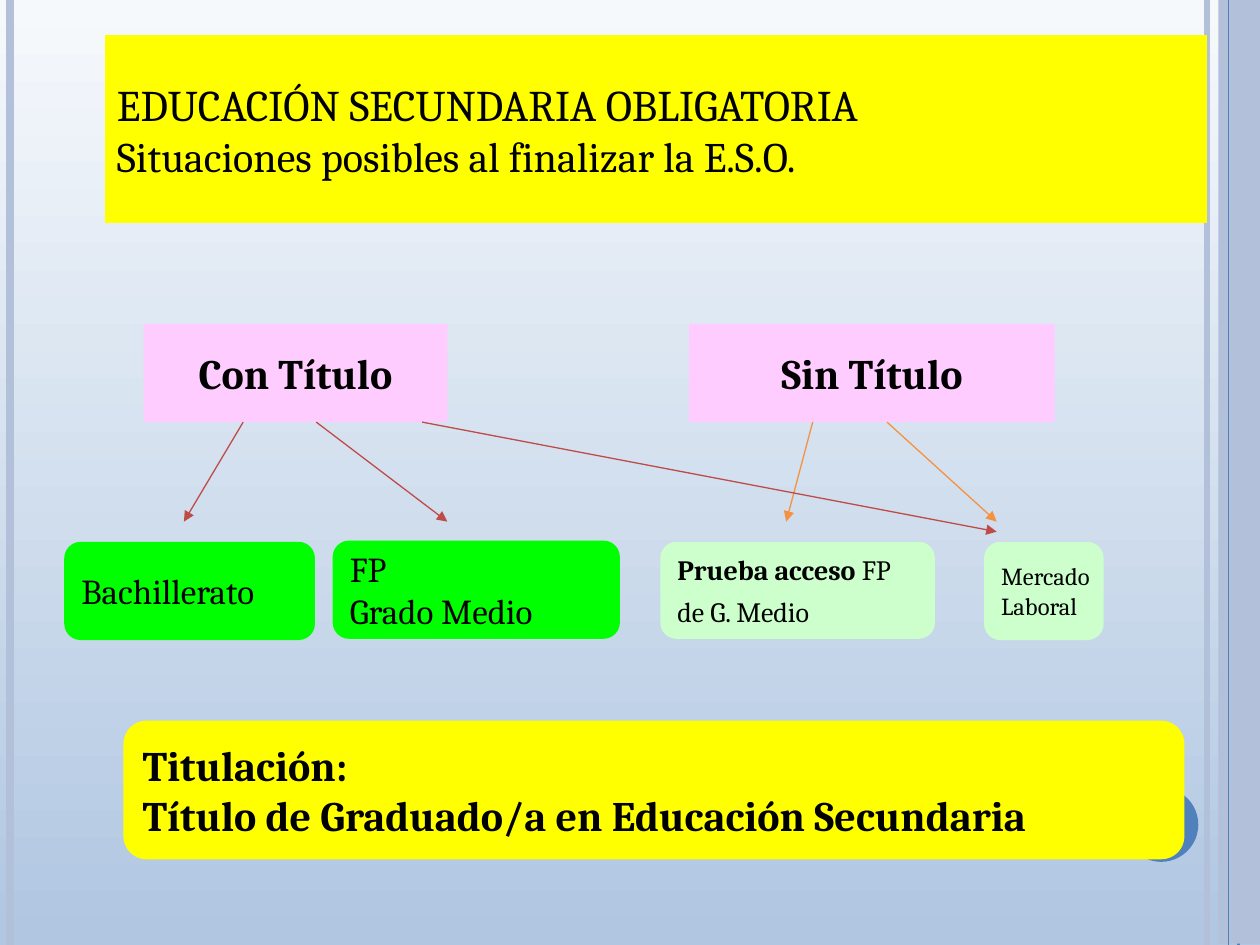
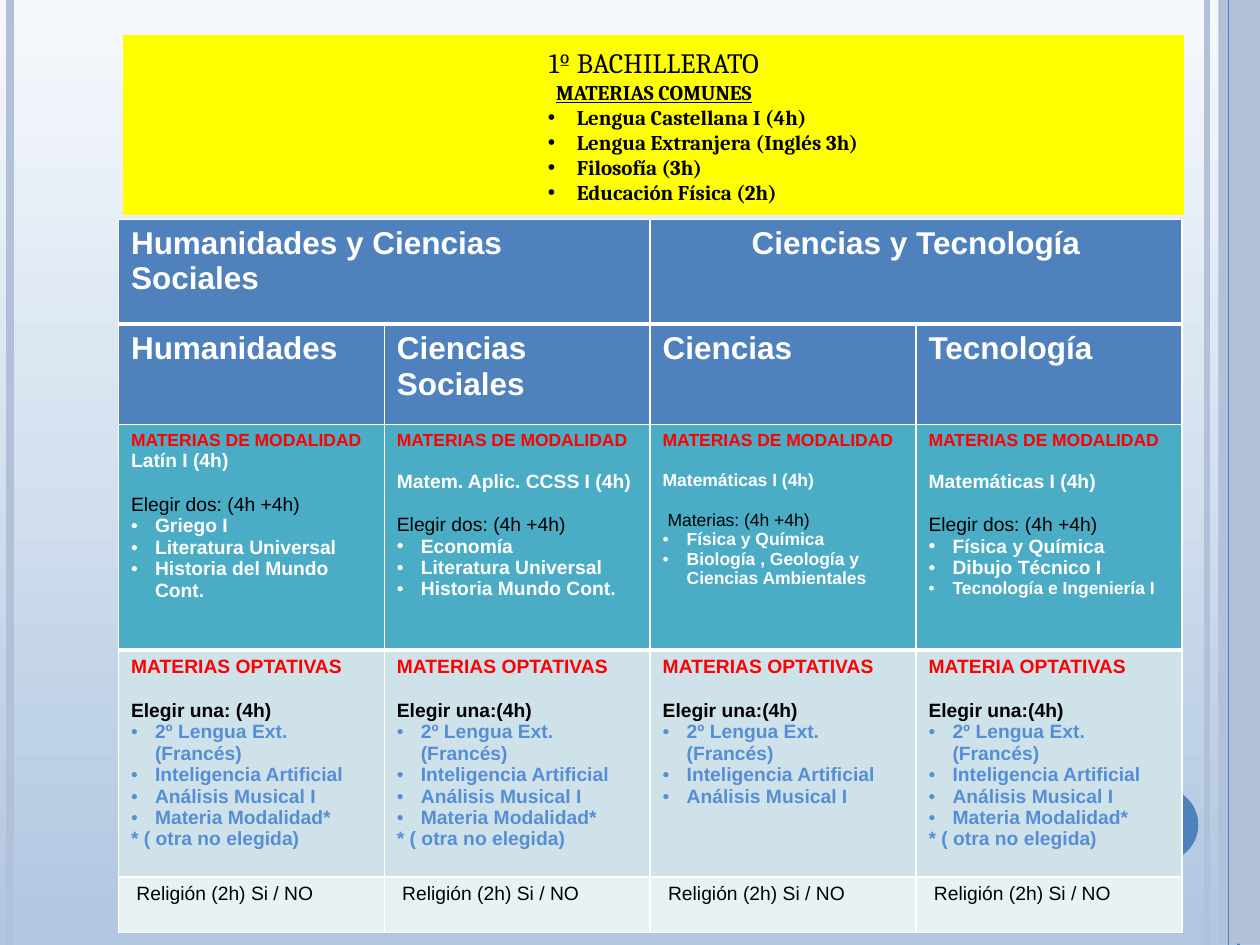
"""Build two slides on the paths after compulsory secondary education."""
from dataclasses import dataclass
from typing import NamedTuple

from lxml import etree
from pptx import Presentation
from pptx import util as u
from pptx.dml import color
from pptx.enum import shapes, text
from pptx.oxml import ns

BLUE, LAVENDER, TEAL, SKY = "4F81BD", "B2C0DA", "4BACC6", "558ED5"
YELLOW, PINK, GREEN, MINT = "FFFF00", "FFCCFF", "00FF00", "CCFFCC"
BLACK, WHITE, RED = "000000", "FFFFFF", "FF0000"
CRIMSON, ORANGE = "BE4B48", "F59240"
SHAPE = shapes.MSO_SHAPE
ROUNDED = SHAPE.FLOWCHART_ALTERNATE_PROCESS
PROCESS = SHAPE.FLOWCHART_PROCESS
CENTER = text.PP_ALIGN.CENTER
LEFT, COLUMNS, TABLE_WIDTH = 0.94, 4, 8.44


class Span(NamedTuple):
    """A run of text with its own weight."""
    words: str
    bold: bool


@dataclass
class Para:
    """A paragraph and its look."""
    content: str | tuple[Span, ...]
    size: float
    bold: bool = False
    ink: str = BLACK
    font: str = "Cambria"
    align: text.PP_ALIGN = text.PP_ALIGN.LEFT
    underline: bool = False
    before: float = 0
    indent: float = 0
    hanging: float = 0


class Box(NamedTuple):
    """A filled shape with text."""
    kind: SHAPE
    left: float
    top: float
    width: float
    height: float
    fill: str
    paras: tuple[Para, ...] = ()


class Line(NamedTuple):
    """A straight line."""
    x1: float
    y1: float
    x2: float
    y2: float
    ink: str
    weight: float = 0.75
    arrow: bool = False


class Row(NamedTuple):
    """A table row with the weights of its top and bottom borders."""
    height: float
    fill: str
    cells: list[list[Para]]
    top: float = 0.96
    bottom: float = 3


def rgb(value: str) -> color.RGBColor:
    """Turn a hex string into a colour."""
    return color.RGBColor.from_string(value)


def add_child(parent, tag: str, **attributes: str):
    """Append a DrawingML element."""
    return etree.SubElement(parent, ns.qn(f"a:{tag}"), **attributes)


def write(frame, paras) -> None:
    """Fill a text frame with paragraphs."""
    for index, para in enumerate(paras):
        paragraph = frame.add_paragraph() if index else frame.paragraphs[0]
        if para.indent:
            properties = paragraph._p.get_or_add_pPr()
            properties.set("marL", str(u.Inches(para.indent)))
            properties.set("indent", str(-u.Inches(para.hanging)))
            add_child(properties, "buFont", typeface="Arial")
            add_child(properties, "buChar", char="•")
        paragraph.alignment = para.align
        paragraph.space_before = u.Pt(para.before)
        font = paragraph.font
        font.name, font.size, font.bold = para.font, u.Pt(para.size), para.bold
        font.underline = para.underline
        font.color.rgb = rgb(para.ink)
        if isinstance(para.content, str):
            paragraph.add_run().text = para.content
        else:
            for span in para.content:
                run = paragraph.add_run()
                run.text, run.font.bold = span.words, span.bold


def draw_box(page, box: Box) -> None:
    """Draw a filled shape and its text."""
    shape = page.shapes.add_shape(box.kind, *map(u.Inches, box[1:5]))
    shape.shadow.inherit = False
    shape.fill.solid()
    shape.fill.fore_color.rgb = rgb(box.fill)
    shape.line.fill.background()
    if box.paras:
        shape.text_frame.word_wrap = False
        shape.text_frame.vertical_anchor = text.MSO_ANCHOR.MIDDLE
        write(shape.text_frame, box.paras)


def draw_line(page, line: Line) -> None:
    """Draw a line, with an arrowhead if asked."""
    connector = page.shapes.add_connector(
        shapes.MSO_CONNECTOR.STRAIGHT, *map(u.Inches, line[:4]))
    connector.line.color.rgb = rgb(line.ink)
    connector.line.width = u.Pt(line.weight)
    if line.arrow:
        add_child(connector.line._get_or_add_ln(), "tailEnd", type="triangle")
    add_child(connector._element.spPr, "effectLst")


def draw_table(page, top: float, rows: list[Row]) -> None:
    """Draw a table of equal columns across the common width."""
    count = len(rows[0].cells)
    height = sum(row.height for row in rows)
    table = page.shapes.add_table(
        len(rows), count, *map(u.Inches, (LEFT, top, TABLE_WIDTH, height))).table
    table.first_row = table.horz_banding = False
    for column in table.columns:
        column.width = u.Inches(TABLE_WIDTH / count)
    for index, row in enumerate(rows):
        table.rows[index].height = u.Inches(row.height)
        for cell, paras in zip(table.rows[index].cells, row.cells):
            cell.fill.solid()
            cell.fill.fore_color.rgb = rgb(row.fill)
            write(cell.text_frame, paras)
            properties = cell._tc.get_or_add_tcPr()
            weights = {"lnL": 0.96, "lnR": 0.96, "lnT": row.top, "lnB": row.bottom}
            for place, (side, weight) in enumerate(weights.items()):
                border = add_child(properties, side, w=str(u.Pt(weight)))
                add_child(add_child(border, "solidFill"), "srgbClr", val=WHITE)
                properties.insert(place, border)


def add_page(deck):
    """Add a blank page with the common background and bands."""
    page = deck.slides.add_slide(deck.slide_layouts[6])
    fill = page.background.fill
    fill.gradient()
    fill.gradient_angle = 270
    for stop, shade in zip(fill.gradient_stops, ("F6F9FC", "B0C6E1")):
        stop.color.rgb = rgb(shade)
    for x, ink, weight in ((9.58, LAVENDER, 3), (0.08, LAVENDER, 4.5), (9.83, BLUE, 1.5)):
        draw_line(page, Line(x, 0, x, 7.5, ink, weight))
    draw_box(page, Box(SHAPE.RECTANGLE, 9.67, 0, 0.33, 7.49, LAVENDER))
    draw_line(page, Line(9.75, 0, 9.75, 7.5, BLUE))
    draw_box(page, Box(SHAPE.OVAL, 8.92, 6.25, 0.59, 0.59, BLUE))
    return page


def cell_para(words: str, size: float = 11, ink: str = WHITE, **look) -> Para:
    """Make a table paragraph, bold unless told otherwise."""
    return Para(words, size, ink=ink, font="Arial", **{"bold": True, **look})


def cell_bullet(words: str, size: float = 11, ink: str = WHITE) -> Para:
    """Make a bulleted table paragraph."""
    return cell_para(words, size, ink, indent=0.19, hanging=0.19)


def core_cell(subject: str, choice: str, options: list[str], size: float = 11,
              gap: float = 11.5, last_size: float = 11) -> list[Para]:
    """List the subjects of one branch."""
    sizes = [size] * (len(options) - 1) + [min(size, last_size)]
    return [cell_para("MATERIAS DE MODALIDAD", 10, RED),
            cell_para(subject, size, before=gap),
            cell_para(choice, size, BLACK, bold=False, before=size * 1.15),
            *map(cell_bullet, options, sizes)]


def optional_cell(heading: str, choice: str, extra: bool = True) -> list[Para]:
    """List the optional subjects of one branch."""
    options = ["2º Lengua Ext. (Francés)", "Inteligencia Artificial", "Análisis Musical I"]
    options += ["Materia Modalidad*"] * extra
    paras = [cell_para(heading, ink=RED), cell_para(choice, ink=BLACK, before=12.65)]
    paras += [cell_bullet(option, ink=SKY) for option in options]
    return paras + [cell_para("* ( otra no elegida)", ink=SKY)] * extra


def build_outcomes(deck) -> None:
    """Build the page on what may follow secondary school."""
    page = add_page(deck)
    boxes = [
        Box(ROUNDED, 0.98, 5.72, 8.42, 1.1, YELLOW, (
            Para("Titulación:", 24, True),
            Para("Título de Graduado/a en Educación Secundaria", 24, True))),
        Box(PROCESS, 0.83, 0.28, 8.75, 1.49, YELLOW, (
            Para("EDUCACIÓN SECUNDARIA OBLIGATORIA", 25),
            Para("Situaciones posibles al finalizar la E.S.O.", 24))),
        Box(SHAPE.RECTANGLE, 1.14, 2.57, 2.41, 0.78, PINK,
            (Para("Con Título", 24, True, align=CENTER),)),
        Box(SHAPE.RECTANGLE, 5.47, 2.57, 2.9, 0.78, PINK,
            (Para("Sin Título", 24, True, align=CENTER),)),
        Box(ROUNDED, 5.24, 4.3, 2.18, 0.77, MINT, (
            Para((Span("Prueba acceso ", True), Span("FP", False)), 16),
            Para("de G. Medio", 16, before=4.5))),
        Box(ROUNDED, 7.81, 4.3, 0.95, 0.78, MINT,
            (Para("Mercado", 14), Para("Laboral", 14))),
        Box(ROUNDED, 0.51, 4.3, 1.99, 0.78, GREEN, (Para("Bachillerato", 20),)),
        Box(ROUNDED, 2.64, 4.29, 2.28, 0.78, GREEN,
            (Para("FP", 20), Para("Grado Medio", 20))),
    ]
    for box in boxes:
        draw_box(page, box)
    arrows = [(1.93, 1.46, 4.14, CRIMSON), (2.51, 3.55, 4.14, CRIMSON),
              (6.45, 6.24, 4.14, ORANGE), (7.04, 7.91, 4.14, ORANGE),
              (3.35, 7.91, 4.22, CRIMSON)]
    for start, end, bottom, ink in arrows:
        draw_line(page, Line(start, 3.35, end, bottom, ink, arrow=True))


def build_first_year(deck) -> None:
    """Build the page on the subjects of the first year."""
    page = add_page(deck)
    common = ("Lengua Castellana I (4h)", "Lengua Extranjera (Inglés 3h)",
              "Filosofía (3h)", "Educación Física (2h)")
    draw_box(page, Box(PROCESS, 0.98, 0.28, 8.42, 1.43, YELLOW, (
        Para("1º BACHILLERATO", 16, align=CENTER),
        Para("MATERIAS COMUNES", 12, True, align=CENTER, underline=True),
        *(Para(name, 12, True, indent=3.5, hanging=0.23) for name in common))))

    draw_table(page, 1.74, [Row(0.83, BLUE, [
        [cell_para("Humanidades y Ciencias Sociales", 18)],
        [cell_para("Ciencias y Tecnología", 18, align=CENTER)]])])
    branches = ("Humanidades", "Ciencias Sociales", "Ciencias", "Tecnología")
    draw_table(page, 2.58, [Row(0.8, BLUE, [[cell_para(name, 18)] for name in branches])])

    pick_two = "Elegir dos: (4h +4h)"
    core = [
        core_cell("Latín I (4h)", pick_two,
                  ["Griego I", "Literatura Universal", "Historia del Mundo Cont."], gap=0),
        core_cell("Matem. Aplic. CCSS I (4h)", pick_two,
                  ["Economía", "Literatura Universal", "Historia Mundo Cont."]),
        core_cell("Matemáticas I (4h)", " Materias: (4h +4h)",
                  ["Física y Química", "Biología , Geología y Ciencias Ambientales"], size=10),
        core_cell("Matemáticas I (4h)", pick_two,
                  ["Física y Química", "Dibujo Técnico I", "Tecnología e Ingeniería I"],
                  last_size=10),
    ]
    heading, pick_one = "MATERIAS OPTATIVAS", "Elegir una:(4h)"
    optional = [optional_cell(heading, "Elegir una: (4h)"),
                optional_cell(heading, pick_one),
                optional_cell(heading, pick_one, extra=False),
                optional_cell("MATERIA OPTATIVAS", pick_one)]
    religion = [cell_para(" Religión (2h) Si / NO", ink=BLACK, bold=False)]
    draw_table(page, 3.37, [
        Row(1.79, TEAL, core),
        Row(1.8, "CFE2EA", optional, top=3, bottom=0.96),
        Row(0.44, "E8F1F4", [religion] * COLUMNS, bottom=0.96)])


def main() -> None:
    """Build and save the deck."""
    deck = Presentation()
    deck.slide_width, deck.slide_height = u.Inches(10), u.Inches(7.5)
    build_outcomes(deck)
    build_first_year(deck)
    deck.save("out.pptx")


if __name__ == "__main__":
    main()
